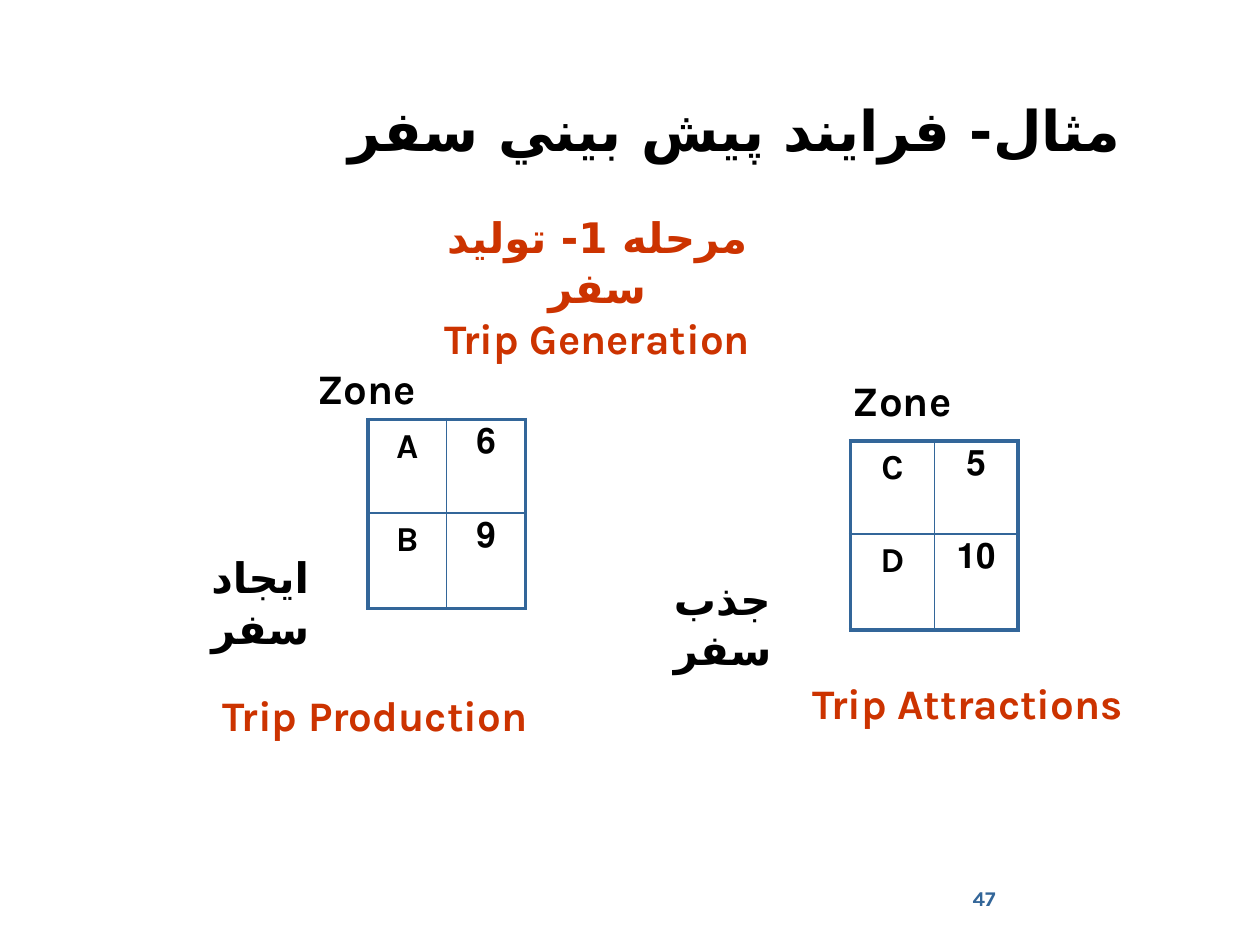
from lxml.etree import SubElement
from pptx import Presentation
from pptx.dml.color import RGBColor
from pptx.enum.text import MSO_ANCHOR, PP_ALIGN
from pptx.oxml import parse_xml
from pptx.oxml.ns import nsdecls, qn
from pptx.util import Inches, Pt

BLACK = RGBColor(0x00, 0x00, 0x00)
RED = RGBColor(0xCC, 0x33, 0x00)
BLUE = RGBColor(0x33, 0x66, 0x99)
FONT = "Karla"
PERSIAN_FONT = "DejaVu Sans"
OUTER_LINE = Pt(2.25)
INNER_LINE = Pt(1)


def write(frame, text, size=24, color=BLACK, bold=True, align=PP_ALIGN.LEFT, rtl=False):
    for index, line in enumerate(text.split("\n")):
        para = frame.paragraphs[0] if index == 0 else frame.add_paragraph()
        para.alignment = align
        if rtl:
            para._p.get_or_add_pPr().set("rtl", "1")
        span = para.add_run()
        span.text = line
        span.font.name = FONT
        span.font.size = Pt(size)
        span.font.bold = bold
        span.font.color.rgb = color
        if not line.isascii():
            SubElement(span._r.get_or_add_rPr(), qn("a:cs"), typeface=PERSIAN_FONT)


def add_label(page, area, text, anchor=MSO_ANCHOR.TOP, **style):
    box = page.shapes.add_textbox(*map(Inches, area))
    box.text_frame.word_wrap = True
    box.text_frame.vertical_anchor = anchor
    write(box.text_frame, text, **style)


def add_title(page, area, text):
    title = page.shapes.title
    title.left, title.top, title.width, title.height = map(Inches, area)
    title.text_frame.vertical_anchor = MSO_ANCHOR.BOTTOM
    write(title.text_frame, text, size=32, align=PP_ALIGN.RIGHT, rtl=True)


def set_borders(cell, outer_sides):
    properties = cell._tc.get_or_add_tcPr()
    for position, side in enumerate("LRTB"):
        width = OUTER_LINE if side in outer_sides else INNER_LINE
        properties.insert(position, parse_xml(
            f'<a:ln{side} {nsdecls("a")} w="{int(width)}"><a:solidFill>'
            f'<a:srgbClr val="{BLUE}"/></a:solidFill></a:ln{side}>'))


def add_zone_table(page, area, rows):
    table = page.shapes.add_table(2, 2, *map(Inches, area)).table
    table.first_row = False
    table.horz_banding = False
    for row, height in zip(table.rows, (0.74, 0.76)):
        row.height = Inches(height)
    for row_index, values in enumerate(rows):
        for column_index, value in enumerate(values):
            cell = table.cell(row_index, column_index)
            cell.fill.background()
            set_borders(cell, "LR"[column_index] + "TB"[row_index])
            write(cell.text_frame, value, size=20, align=PP_ALIGN.CENTER, rtl=True)


def main():
    deck = Presentation()
    deck.slide_width, deck.slide_height = Inches(10), Inches(7.5)
    page = deck.slides.add_slide(deck.slide_layouts[5])

    add_title(page, (1.5, 0.42, 7.5, 0.92), "مثال- فرايند پيش بيني سفر")
    add_label(page, (3.33, 1.63, 2.82, 0.9), "مرحله 1- توليد سفر\nTrip Generation",
              color=RED, align=PP_ALIGN.CENTER)

    add_label(page, (2.42, 2.83, 1.03, 0.5), "Zone")
    add_zone_table(page, (2.92, 3.33, 1.25, 1.5), (("A", "6"), ("B", "9")))
    add_label(page, (1.58, 4.33, 1.2, 0.5), "ايجاد سفر")
    add_label(page, (1.67, 5.42, 2.79, 0.5), "Trip Production", color=RED)

    add_label(page, (6.67, 2.92, 1.03, 0.5), "Zone")
    add_zone_table(page, (6.75, 3.5, 1.33, 1.5), (("C", "5"), ("D", "10")))
    add_label(page, (5.25, 4.5, 1.24, 0.5), "جذب سفر")
    add_label(page, (6.35, 5.33, 2.81, 0.5), "Trip Attractions", color=RED)

    add_label(page, (5.92, 6.92, 2.08, 0.41), "47", anchor=MSO_ANCHOR.MIDDLE,
              size=12, color=BLUE, align=PP_ALIGN.RIGHT)
    deck.save("out.pptx")


if __name__ == "__main__":
    main()
